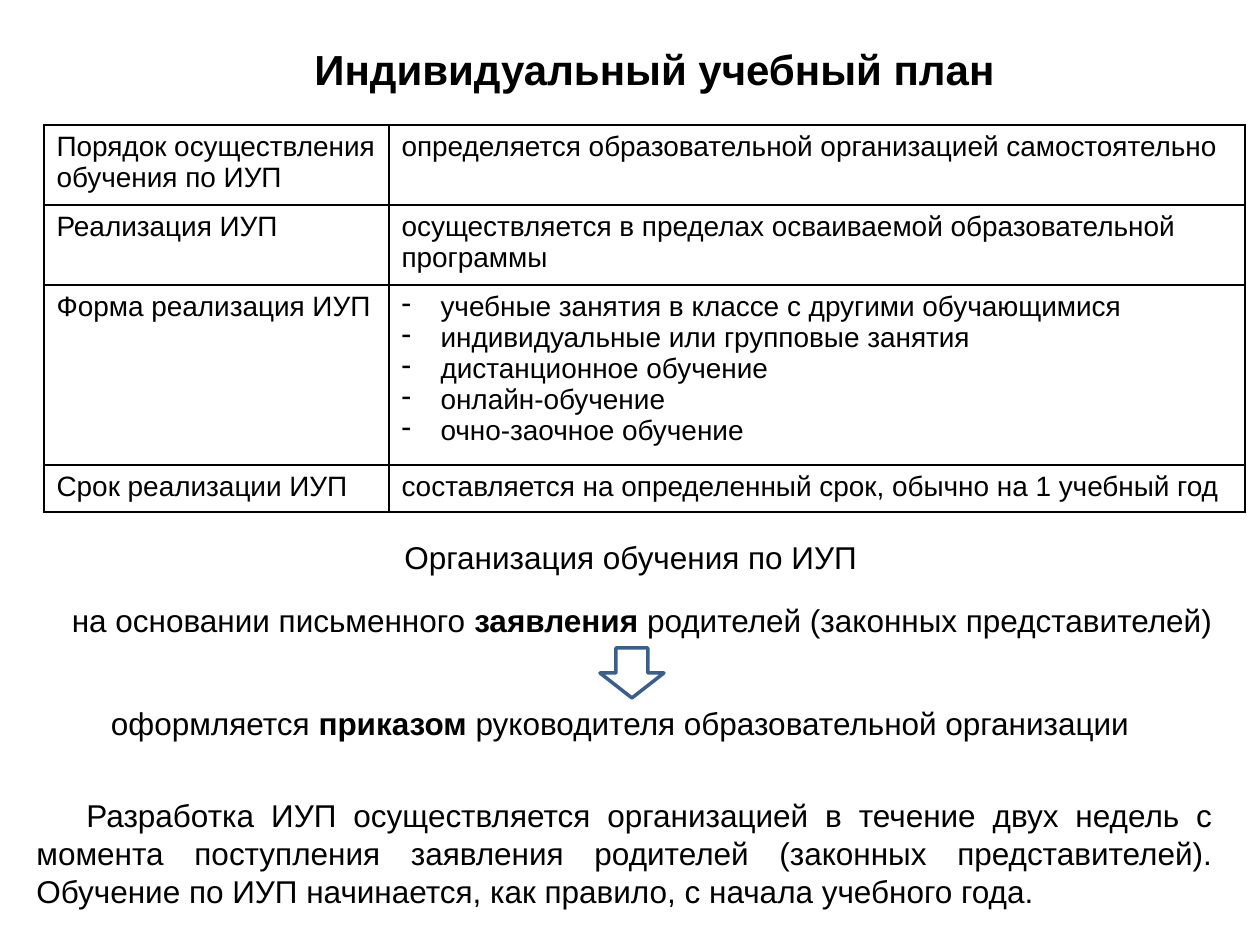
from lxml.etree import SubElement
from pptx import Presentation
from pptx.dml.color import RGBColor
from pptx.enum.shapes import MSO_SHAPE
from pptx.enum.text import PP_ALIGN
from pptx.oxml.ns import qn
from pptx.util import Pt

PX = 914400 / 126
BLACK = RGBColor(0x00, 0x00, 0x00)
WHITE = RGBColor(0xFF, 0xFF, 0xFF)
BLUE = RGBColor(0x3A, 0x5F, 0x8C)


def px(*lengths):
    """Turn pixel lengths into a list of EMU values."""
    return [round(length * PX) for length in lengths]


def format_runs(text_frame, size):
    for paragraph in text_frame.paragraphs:
        for run in paragraph.runs:
            run.font.name = "Arial"
            run.font.size = Pt(size)
            run.font.color.rgb = BLACK


presentation = Presentation()
presentation.slide_width, presentation.slide_height = px(1260, 945)
slide = presentation.slides.add_slide(presentation.slide_layouts[6])

# Table of the plan's rules
ROWS = [
    ("Порядок осуществления\nобучения по ИУП",
     "определяется образовательной организацией самостоятельно"),
    ("Реализация ИУП",
     "осуществляется в пределах осваиваемой образовательной программы"),
    ("Форма реализация ИУП",
     "учебные занятия в классе с другими обучающимися\n"
     "индивидуальные или групповые занятия\n"
     "дистанционное обучение\n"
     "онлайн-обучение\n"
     "очно-заочное обучение"),
    ("Срок реализации ИУП",
     "составляется на определенный срок, обычно на 1 учебный год"),
]
FORMS_CELL = (2, 1)
table = slide.shapes.add_table(4, 2, *px(44, 125, 1201, 387)).table
table.first_row = table.horz_banding = False
for column, width in zip(table.columns, px(345, 856)):
    column.width = width
for row, height in zip(table.rows, px(80, 80, 180, 47)):
    row.height = height

for row_index, texts in enumerate(ROWS):
    for column_index, text in enumerate(texts):
        cell = table.cell(row_index, column_index)
        cell.text_frame.text = text
        format_runs(cell.text_frame, 16)
        properties = cell._tc.get_or_add_tcPr()
        for side in ("a:lnL", "a:lnR", "a:lnT", "a:lnB"):
            border = SubElement(properties, qn(side), w=str(Pt(1)))
            fill = SubElement(border, qn("a:solidFill"))
            SubElement(fill, qn("a:srgbClr"), val=str(BLACK))
        cell.fill.background()
        if (row_index, column_index) == FORMS_CELL:
            indent = px(39)[0]
            for paragraph in cell.text_frame.paragraphs:
                paragraph_properties = paragraph._p.get_or_add_pPr()
                paragraph_properties.set("marL", str(indent))
                paragraph_properties.set("indent", str(-indent))
                SubElement(paragraph_properties, qn("a:buChar"), char="-")

# Title and procedure: box, size, alignment, wrap, (text, bold) runs
TEXTS = [
    ((302, 37, 725, 63), 24, PP_ALIGN.LEFT, False,
     [("Индивидуальный учебный план", True)]),
    ((392, 532, 486, 50), 18, PP_ALIGN.LEFT, True,
     [("Организация обучения по ИУП", False)]),
    ((39, 595, 1206, 50), 18, PP_ALIGN.CENTER, True,
     [("на основании письменного ", False), ("заявления", True),
      (" родителей (законных представителей)", False)]),
    ((39, 698, 1171, 50), 18, PP_ALIGN.CENTER, True,
     [("оформляется ", False), ("приказом", True),
      (" руководителя образовательной организации ", False)]),
    ((24, 790, 1201, 127), 18, PP_ALIGN.JUSTIFY, True,
     [("Разработка ИУП осуществляется организацией в течение двух недель "
       "с момента поступления заявления родителей (законных представителей). "
       "Обучение по ИУП начинается, как правило, с начала учебного года.",
       False)]),
]
for box, size, alignment, wrap, runs in TEXTS:
    text_frame = slide.shapes.add_textbox(*px(*box)).text_frame
    text_frame.word_wrap = wrap
    paragraph = text_frame.paragraphs[0]
    paragraph.alignment = alignment
    if alignment == PP_ALIGN.JUSTIFY:
        paragraph._p.get_or_add_pPr().set("indent", str(px(50)[0]))
    for text, bold in runs:
        run = paragraph.add_run()
        run.text = text
        run.font.bold = bold
    format_runs(text_frame, size)

arrow = slide.shapes.add_shape(MSO_SHAPE.DOWN_ARROW, *px(600, 648, 64, 50))
arrow.shadow.inherit = False
arrow.fill.solid()
arrow.fill.fore_color.rgb = WHITE
arrow.line.color.rgb = BLUE
arrow.line.width = Pt(2)

presentation.save("out.pptx")
